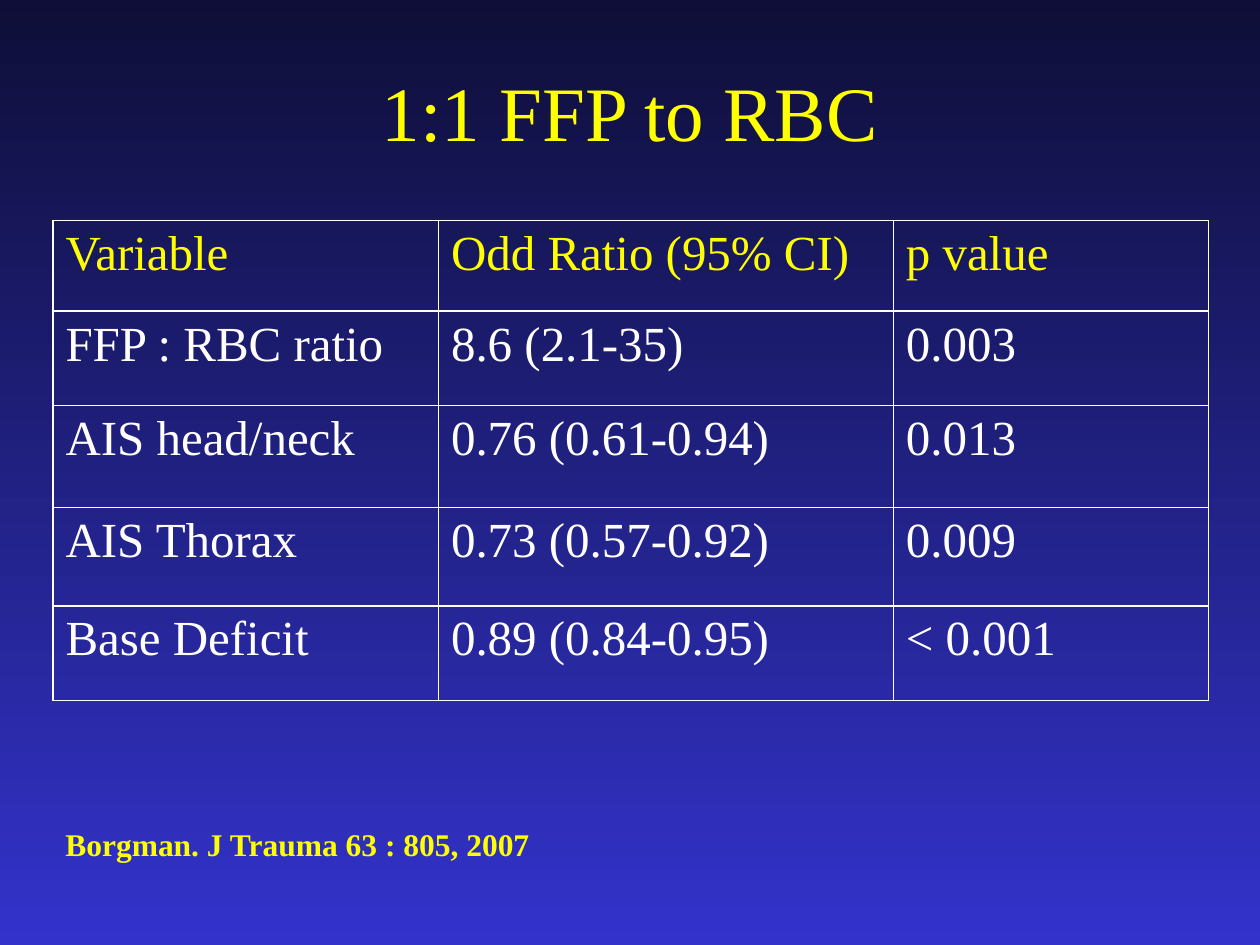
"""Build a slide with a table of odds ratios for the FFP to RBC study."""

from dataclasses import dataclass

from lxml.etree import SubElement
from pptx import Presentation
from pptx.dml.color import RGBColor
from pptx.enum.text import MSO_ANCHOR, PP_ALIGN
from pptx.oxml.ns import qn
from pptx.slide import Slide
from pptx.table import _Cell
from pptx.text.text import TextFrame
from pptx.util import Inches, Pt


@dataclass(frozen=True)
class Theme:
    font: str = "Times New Roman"
    accent: str = "FFFF00"
    body: str = "FFFFFF"
    backdrop: tuple[str, str] = ("0E0E38", "3333CC")
    title_size: int = 44
    table_size: int = 28
    citation_size: int = 18
    border_width: int = 1


@dataclass(frozen=True)
class Label:
    text: str
    left: float
    top: float
    width: float
    height: float
    size: int
    bold: bool = False
    align: PP_ALIGN = PP_ALIGN.LEFT
    anchor: MSO_ANCHOR = MSO_ANCHOR.TOP


THEME = Theme()
LABELS = (
    Label("1:1 FFP to RBC", 0.75, 0.25, 8.5, 1.25, THEME.title_size,
          align=PP_ALIGN.CENTER, anchor=MSO_ANCHOR.MIDDLE),
    Label("Borgman. J Trauma 63 : 805, 2007", 0.42, 6.5, 5.25, 0.4,
          THEME.citation_size, bold=True),
)
COLUMN_WIDTHS = (3.06, 3.61, 2.5)
ROW_HEIGHTS = (0.72, 0.75, 0.81, 0.78, 0.75)
RESULTS = (
    ("Variable", "Odd Ratio (95% CI)", "p value"),
    ("FFP : RBC ratio", "8.6 (2.1-35)", "0.003"),
    ("AIS head/neck", "0.76 (0.61-0.94)", "0.013"),
    ("AIS Thorax", "0.73 (0.57-0.92)", "0.009"),
    ("Base Deficit", "0.89 (0.84-0.95)", "< 0.001"),
)


def write_text(frame: TextFrame, text: str, size: int, color: str,
               bold: bool = False, align: PP_ALIGN = PP_ALIGN.LEFT) -> None:
    paragraph = frame.paragraphs[0]
    paragraph.alignment = align
    span = paragraph.add_run()
    span.text = text
    formats = {"name": THEME.font, "size": Pt(size), "bold": bold}
    for attribute, value in formats.items():
        setattr(span.font, attribute, value)
    span.font.color.rgb = RGBColor.from_string(color)


def paint_background(page: Slide) -> None:
    fill = page.background.fill
    fill.gradient()
    fill.gradient_angle = 270
    for stop, position, color in zip(fill.gradient_stops, (0, 1), THEME.backdrop):
        stop.position = position
        stop.color.rgb = RGBColor.from_string(color)


def add_label(page: Slide, label: Label) -> None:
    box = page.shapes.add_textbox(
        Inches(label.left), Inches(label.top), Inches(label.width), Inches(label.height))
    formats = {"word_wrap": True, "vertical_anchor": label.anchor}
    for attribute, value in formats.items():
        setattr(box.text_frame, attribute, value)
    write_text(box.text_frame, label.text, label.size, THEME.accent, label.bold, label.align)


def draw_borders(cell: _Cell) -> None:
    properties = cell._tc.get_or_add_tcPr()
    for side in ("a:lnL", "a:lnR", "a:lnT", "a:lnB"):
        line = SubElement(properties, qn(side), w=str(Pt(THEME.border_width)))
        solid = SubElement(line, qn("a:solidFill"))
        SubElement(solid, qn("a:srgbClr"), val=THEME.body)


def add_results(page: Slide) -> None:
    table = page.shapes.add_table(
        len(ROW_HEIGHTS), len(COLUMN_WIDTHS), Inches(0.42), Inches(1.75),
        Inches(sum(COLUMN_WIDTHS)), Inches(sum(ROW_HEIGHTS))).table
    formats = {"first_row": False, "horz_banding": False}
    for attribute, value in formats.items():
        setattr(table, attribute, value)
    for column, width in zip(table.columns, COLUMN_WIDTHS):
        column.width = Inches(width)
    for index, (row, height, texts) in enumerate(zip(table.rows, ROW_HEIGHTS, RESULTS)):
        row.height = Inches(height)
        color = THEME.body if index else THEME.accent
        for cell, text in zip(row.cells, texts):
            draw_borders(cell)
            cell.fill.background()
            write_text(cell.text_frame, text, THEME.table_size, color)


def main() -> None:
    deck = Presentation()
    deck.slide_width, deck.slide_height = Inches(10), Inches(7.5)
    page = deck.slides.add_slide(deck.slide_layouts[6])
    paint_background(page)
    add_results(page)
    for label in LABELS:
        add_label(page, label)
    deck.save("out.pptx")


if __name__ == "__main__":
    main()
